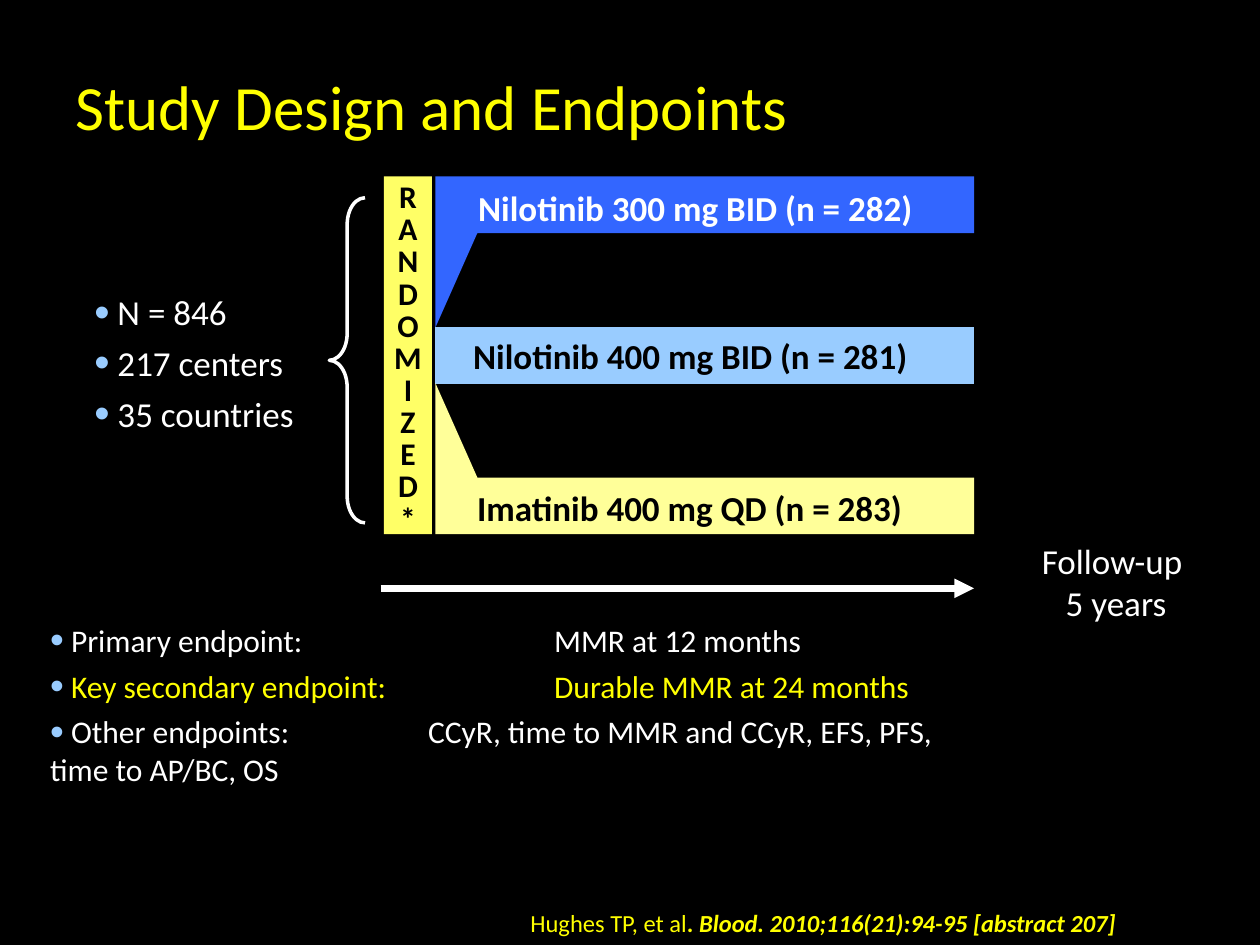
from lxml.etree import SubElement
from pptx import Presentation
from pptx.dml.color import RGBColor
from pptx.enum.shapes import MSO_CONNECTOR, MSO_SHAPE
from pptx.enum.text import MSO_ANCHOR, MSO_AUTO_SIZE, PP_ALIGN
from pptx.oxml.ns import qn
from pptx.util import Pt

COLORS = {
    "black": "000000", "white": "FFFFFF", "yellow": "FFFF00", "sky": "99CCFF",
    "blue": "3366FF", "cream": "FFFF99", "lemon": "FFFF66",
}
FONT = "Calibri"
ARMS = [
    ("Nilotinib 300 mg BID (n = 282)", "blue", "white", 24.5, 5.8),
    ("Nilotinib 400 mg BID (n = 281)", "sky", "black", 21.6, 4.3),
    ("Imatinib 400 mg QD (n = 283)", "cream", "black", 23.8, 5),
]
POPULATION = [" N = 846", " 217 centers", " 35 countries"]
ENDPOINTS = [
    (" Primary endpoint:\tMMR at 12 months", "white", 288),
    (" Key secondary endpoint:\tDurable MMR at 24 months", "yellow", 288),
    (" Other endpoints:\tCCyR, time to MMR and CCyR, EFS, PFS,\vtime to AP/BC, OS", "white", 216),
]


def rgb(name):
    """Look up a palette colour."""
    return RGBColor.from_string(COLORS[name])


def place(shape, box):
    """Move a shape to a box given in points."""
    shape.left, shape.top, shape.width, shape.height = (Pt(v) for v in box)


def add_bullet(paragraph, tab=None):
    """Give a paragraph a sky-blue bullet and an optional tab stop."""
    props = paragraph._p.get_or_add_pPr()
    props.set("marL", "0")
    props.set("indent", "0")
    color = SubElement(props, qn("a:buClr"))
    SubElement(color, qn("a:srgbClr"), val=COLORS["sky"])
    SubElement(props, qn("a:buSzPct"), val="125000")
    SubElement(props, qn("a:buFont"), typeface="Arial")
    SubElement(props, qn("a:buChar"), char="•")
    if tab:
        stops = SubElement(props, qn("a:tabLst"))
        SubElement(stops, qn("a:tab"), pos=str(Pt(tab)), algn="l")


def write(paragraph, text, size=20, color="white", bold=False, italic=False,
          align=PP_ALIGN.LEFT, before=0, spacing=None):
    """Append formatted text to a paragraph, breaking lines at vertical tabs."""
    paragraph.alignment = align
    paragraph.space_before = Pt(before)
    if spacing:
        paragraph.line_spacing = spacing
    for index, line in enumerate(text.split("\v")):
        if index:
            paragraph.add_line_break()
        run = paragraph.add_run()
        run.text = line
        font = run.font
        font.name, font.size, font.bold, font.italic = FONT, Pt(size), bold, italic
        font.color.rgb = rgb(color)


def paragraphs(frame, count):
    """Return the given number of paragraphs in an empty frame."""
    return [frame.paragraphs[0]] + [frame.add_paragraph() for _ in range(count - 1)]


def set_insets(frame, left, top, right, bottom):
    """Set the margins of a text frame in points."""
    frame.margin_left, frame.margin_top = Pt(left), Pt(top)
    frame.margin_right, frame.margin_bottom = Pt(right), Pt(bottom)


def text_frame(slide, box):
    """Add a wrapping text box and return its frame."""
    frame = slide.shapes.add_textbox(*(Pt(v) for v in box)).text_frame
    frame.word_wrap = True
    return frame


def fill_plain(shape, color):
    """Fill a shape without outline or shadow."""
    shape.shadow.inherit = False
    shape.fill.solid()
    shape.fill.fore_color.rgb = rgb(color)
    shape.line.fill.background()


def add_title(slide, box):
    """Place and format the slide title."""
    title = slide.shapes.title
    place(title, box)
    frame = title.text_frame
    frame.auto_size = MSO_AUTO_SIZE.NONE
    frame.vertical_anchor = MSO_ANCHOR.MIDDLE
    write(frame.paragraphs[0], "Study Design and Endpoints", size=36, color="yellow", spacing=0.9)


def add_population(slide, box, brace_box):
    """List the enrolled population beside its brace."""
    frame = text_frame(slide, box)
    for paragraph, fact in zip(paragraphs(frame, len(POPULATION)), POPULATION):
        write(paragraph, fact, before=5)
        add_bullet(paragraph)
    brace = slide.shapes.add_shape(MSO_SHAPE.LEFT_BRACE, *(Pt(v) for v in brace_box))
    brace.adjustments[0] = 0.75
    brace.shadow.inherit = False
    brace.fill.background()
    brace.line.color.rgb = rgb("white")
    brace.line.width = Pt(2)


def add_randomization(slide, box):
    """Draw the vertical randomization band."""
    band = slide.shapes.add_shape(MSO_SHAPE.RECTANGLE, *(Pt(v) for v in box))
    fill_plain(band, "lemon")
    frame = band.text_frame
    frame.vertical_anchor = MSO_ANCHOR.MIDDLE
    set_insets(frame, 0, 8.6, 0, 3.6)
    letters = "RANDOMIZED*"
    for paragraph, letter in zip(paragraphs(frame, len(letters)), letters):
        write(paragraph, letter, size=18, color="black", bold=True,
              align=PP_ALIGN.CENTER, spacing=0.85)


def add_arms(slide, box, bar=32.4, flare=24, tip=86.4):
    """Draw the three treatment arms, the outer two flaring towards the middle."""
    left, top, width, height = box
    right, bottom = left + width, top + height
    tops = [top + row * (height - bar) / 2 for row in range(3)]
    outlines = [
        [(left, edge), (right, edge), (right, edge + way * bar),
         (left + flare, edge + way * bar), (left, edge + way * tip)]
        for edge, way in ((top, 1), (bottom, -1))
    ]
    middle = [(left, tops[1]), (right, tops[1]), (right, tops[1] + bar), (left, tops[1] + bar)]
    outlines.insert(1, middle)
    for outline, bar_top, (label, color, ink, dx, dy) in zip(outlines, tops, ARMS):
        start, *rest = [(Pt(x), Pt(y)) for x, y in outline]
        builder = slide.shapes.build_freeform(*start, scale=1.0)
        builder.add_line_segments(rest, close=True)
        fill_plain(builder.convert_to_shape(), color)
        frame = text_frame(slide, (left + dx, bar_top + dy, 280, 24))
        set_insets(frame, 0, 0, 0, 0)
        write(frame.paragraphs[0], label, color=ink, bold=True)


def add_follow_up(slide, start, end, y, box):
    """Draw the time arrow and its follow-up label."""
    arrow = slide.shapes.add_connector(MSO_CONNECTOR.STRAIGHT, Pt(start), Pt(y), Pt(end), Pt(y))
    arrow.line.color.rgb = rgb("white")
    arrow.line.width = Pt(3.75)
    SubElement(arrow.line._get_or_add_ln(), qn("a:tailEnd"), type="triangle")
    SubElement(arrow._element.spPr, qn("a:effectLst"))
    frame = text_frame(slide, box)
    for paragraph, line in zip(paragraphs(frame, 2), ("Follow-up", " 5 years")):
        write(paragraph, line, align=PP_ALIGN.CENTER)


def add_endpoints(slide, box):
    """List the study endpoints in two tabbed columns."""
    frame = text_frame(slide, box)
    for paragraph, (text, color, tab) in zip(paragraphs(frame, len(ENDPOINTS)), ENDPOINTS):
        write(paragraph, text, size=18, color=color, before=4.5)
        add_bullet(paragraph, tab)


def add_citation(slide, box):
    """Write the source reference."""
    citation = text_frame(slide, box).paragraphs[0]
    write(citation, "Hughes TP, et al", size=14, color="yellow")
    write(citation, ". ", size=14, color="yellow", bold=True)
    write(citation, "Blood. 2010;116(21):94-95 [abstract 207]", size=14,
          color="yellow", bold=True, italic=True)


def main():
    """Build and save the study design slide."""
    deck = Presentation()
    deck.slide_width, deck.slide_height = Pt(720), Pt(540)
    slide = deck.slides.add_slide(deck.slide_layouts[5])
    slide.background.fill.solid()
    slide.background.fill.fore_color.rgb = rgb("black")
    add_title(slide, (36, 18, 648, 90))
    add_endpoints(slide, (21.6, 351.4, 684, 105))
    add_arms(slide, (248.8, 100.8, 307.8, 204.5))
    add_randomization(slide, (219.4, 100.8, 27.5, 204.5))
    add_population(slide, (46.8, 162.7, 152, 91.4), (188.2, 113, 20.4, 185.8))
    add_follow_up(slide, 217.5, 556.6, 336.2, (566, 304.6, 139, 55.4))
    add_citation(slide, (296, 515.5, 424, 24))
    deck.save("out.pptx")


if __name__ == "__main__":
    main()
